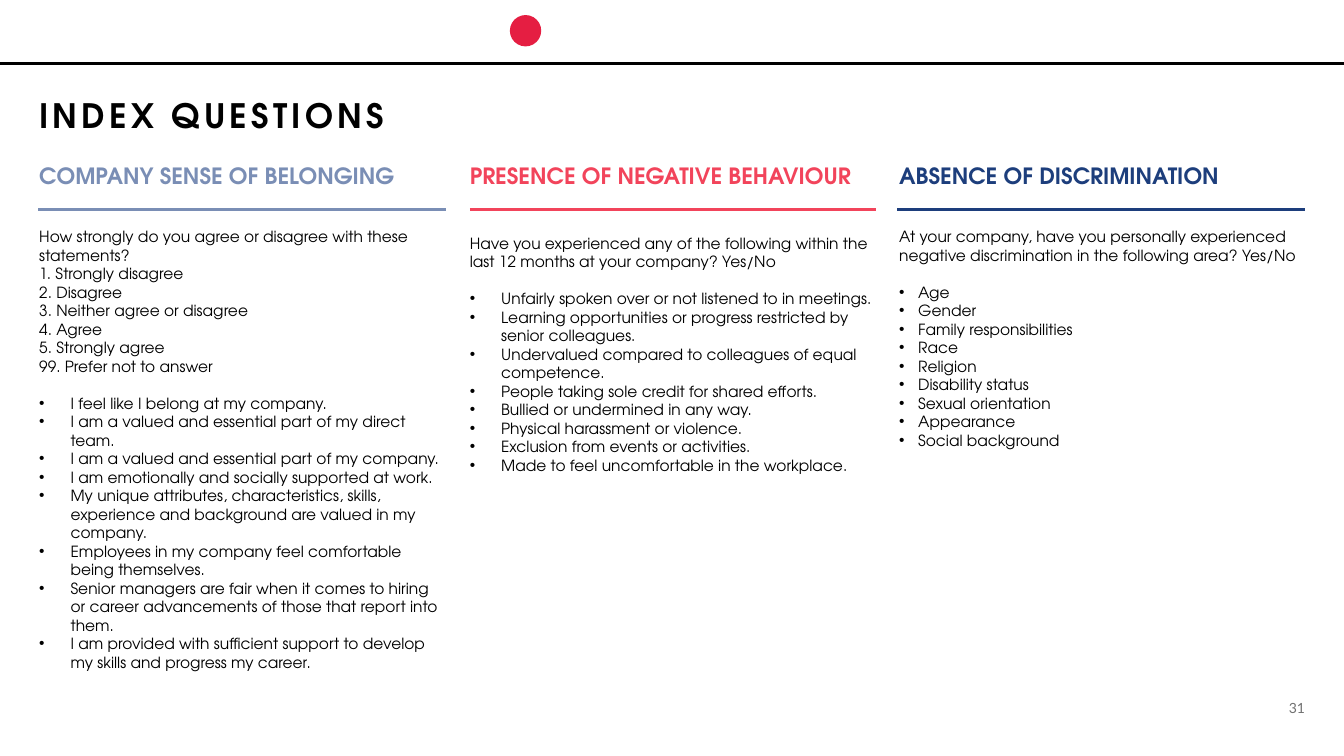
from lxml import etree
from pptx import Presentation
from pptx.dml.color import RGBColor
from pptx.enum.shapes import MSO_CONNECTOR, MSO_SHAPE
from pptx.enum.text import MSO_ANCHOR, PP_ALIGN
from pptx.oxml.ns import qn
from pptx.util import Cm, Pt

STRAIGHT = MSO_CONNECTOR.STRAIGHT
OVAL = MSO_SHAPE.OVAL
TOP, MIDDLE = MSO_ANCHOR.TOP, MSO_ANCHOR.MIDDLE
LEFT, RIGHT = PP_ALIGN.LEFT, PP_ALIGN.RIGHT

BLACK = RGBColor(0x00, 0x00, 0x00)
GREY = RGBColor(0x71, 0x71, 0x71)
RED = RGBColor(0xE5, 0x1E, 0x42)
SLATE = RGBColor(0x7A, 0x8E, 0xB5)
CORAL = RGBColor(0xF2, 0x44, 0x5B)
NAVY = RGBColor(0x1D, 0x3E, 0x7C)

SLIDE_WIDTH, SLIDE_HEIGHT = 33.87, 19.05
COLUMN_TOP, COLUMN_WIDTH, RULE_TOP = 4.09, 10.25, 5.28

COLUMNS = [
    {
        "heading": "COMPANY SENSE OF BELONGING",
        "color": SLATE, "left": 0.99, "rule": (0.97, 11.25),
        "height": 13.51, "gap": 27.3, "indent": 0.79,
        "intro": [
            "How strongly do you agree or disagree with these statements?",
            "1. Strongly disagree",
            "2. Disagree",
            "3. Neither agree or disagree",
            "4. Agree",
            "5. Strongly agree",
            "99. Prefer not to answer",
        ],
        "bullets": [
            "I feel like I belong at my company.",
            "I am a valued and essential part of my direct team.",
            "I am a valued and essential part of my company.",
            "I am emotionally and socially supported at work.",
            "My unique attributes, characteristics, skills, experience and "
            "background are valued in my company.",
            "Employees in my company feel comfortable being themselves.",
            "Senior managers are fair when it comes to hiring or career "
            "advancements of those that report into them.",
            "I am provided with sufficient support to develop my skills and "
            "progress my career.",
        ],
    },
    {
        "heading": "PRESENCE OF NEGATIVE BEHAVIOUR",
        "color": CORAL, "left": 11.84, "rule": (11.84, 22.07),
        "height": 9.02, "gap": 32, "indent": 0.79,
        "intro": [
            "Have you experienced any of the following within the last 12 "
            "months at your company? Yes/No",
        ],
        "bullets": [
            "Unfairly spoken over or not listened to in meetings.",
            "Learning opportunities or progress restricted by senior colleagues.",
            "Undervalued compared to colleagues of equal competence.",
            "People taking sole credit for shared efforts.",
            "Bullied or undermined in any way.",
            "Physical harassment or violence.",
            "Exclusion from events or activities.",
            "Made to feel uncomfortable in the workplace.",
        ],
    },
    {
        "heading": "ABSENCE OF DISCRIMINATION",
        "color": NAVY, "left": 22.66, "rule": (22.61, 32.89),
        "height": 9.27, "gap": 27.3, "indent": 0.48,
        "intro": [
            "At your company, have you personally experienced negative "
            "discrimination in the following area? Yes/No",
        ],
        "bullets": [
            "Age", "Gender", "Family responsibilities", "Race", "Religion",
            "Disability status", "Sexual orientation", "Appearance",
            "Social background",
        ],
    },
]


class SlideBuilder:
    font = "TeX Gyre Adventor"
    number_font = "Lato"
    line_factor = 1.2
    rule_weight = Pt(1.5)

    def __init__(self, slide):
        self.slide = slide

    def rule(self, start, end, top, color):
        connector = self.slide.shapes.add_connector(
            STRAIGHT, Cm(start), Cm(top), Cm(end), Cm(top))
        connector.line.color.rgb = color
        connector.line.width = self.rule_weight
        etree.SubElement(connector._element.spPr, qn("a:effectLst"))

    def dot(self, left, top, size, color):
        shape = self.slide.shapes.add_shape(
            OVAL, Cm(left), Cm(top), Cm(size), Cm(size))
        shape.shadow.inherit = False
        shape.fill.solid()
        shape.fill.fore_color.rgb = color
        shape.line.fill.background()

    def text_box(self, left, top, width, height, anchor=TOP):
        shape = self.slide.shapes.add_textbox(
            Cm(left), Cm(top), Cm(width), Cm(height))
        frame = shape.text_frame
        frame.word_wrap = True
        frame.vertical_anchor = anchor
        frame.margin_left = frame.margin_right = 0
        frame.margin_top = frame.margin_bottom = 0
        return frame

    def paragraph(self, frame, text, size, color=BLACK, bold=False,
                  font=None, align=LEFT, after=0, spacing=0):
        first = frame.paragraphs[0]
        paragraph = frame.add_paragraph() if first.runs else first
        paragraph.alignment = align
        paragraph.line_spacing = Pt(size * self.line_factor)
        paragraph.space_after = Pt(after)
        run = paragraph.add_run()
        run.text = text
        run.font.name = font or self.font
        run.font.size = Pt(size)
        run.font.bold = bold
        run.font.color.rgb = color
        if spacing:
            run._r.get_or_add_rPr().set("spc", str(spacing * 100))
        return paragraph

    def bullet(self, frame, text, size, indent):
        paragraph = self.paragraph(frame, text, size)
        properties = paragraph._p.get_or_add_pPr()
        properties.set("marL", str(Cm(indent)))
        properties.set("indent", str(-Cm(indent)))
        etree.SubElement(properties, qn("a:buFont"), typeface="Arial")
        etree.SubElement(properties, qn("a:buChar"), char="•")

    def column(self, column):
        frame = self.text_box(
            column["left"], COLUMN_TOP, COLUMN_WIDTH, column["height"])
        self.paragraph(frame, column["heading"], 16, column["color"],
                       bold=True, after=column["gap"])
        for text in column["intro"]:
            intro = self.paragraph(frame, text, 11)
        intro.space_after = Pt(11 * self.line_factor)
        for text in column["bullets"]:
            self.bullet(frame, text, 11, column["indent"])
        self.rule(*column["rule"], RULE_TOP, column["color"])


def main():
    presentation = Presentation()
    presentation.slide_width = Cm(SLIDE_WIDTH)
    presentation.slide_height = Cm(SLIDE_HEIGHT)
    builder = SlideBuilder(
        presentation.slides.add_slide(presentation.slide_layouts[6]))

    builder.rule(0, SLIDE_WIDTH, 1.6, BLACK)
    builder.dot(12.85, 0.38, 0.79, RED)
    title = builder.text_box(0.99, 2.4, 31.83, 0.79)
    builder.paragraph(title, "INDEX QUESTIONS", 24, bold=True, spacing=3)
    for column in COLUMNS:
        builder.column(column)
    number = builder.text_box(30.2, 17.55, 2.69, 0.56, MIDDLE)
    builder.paragraph(number, "31", 10, GREY, font=builder.number_font,
                      align=RIGHT)
    presentation.save("out.pptx")


if __name__ == "__main__":
    main()
